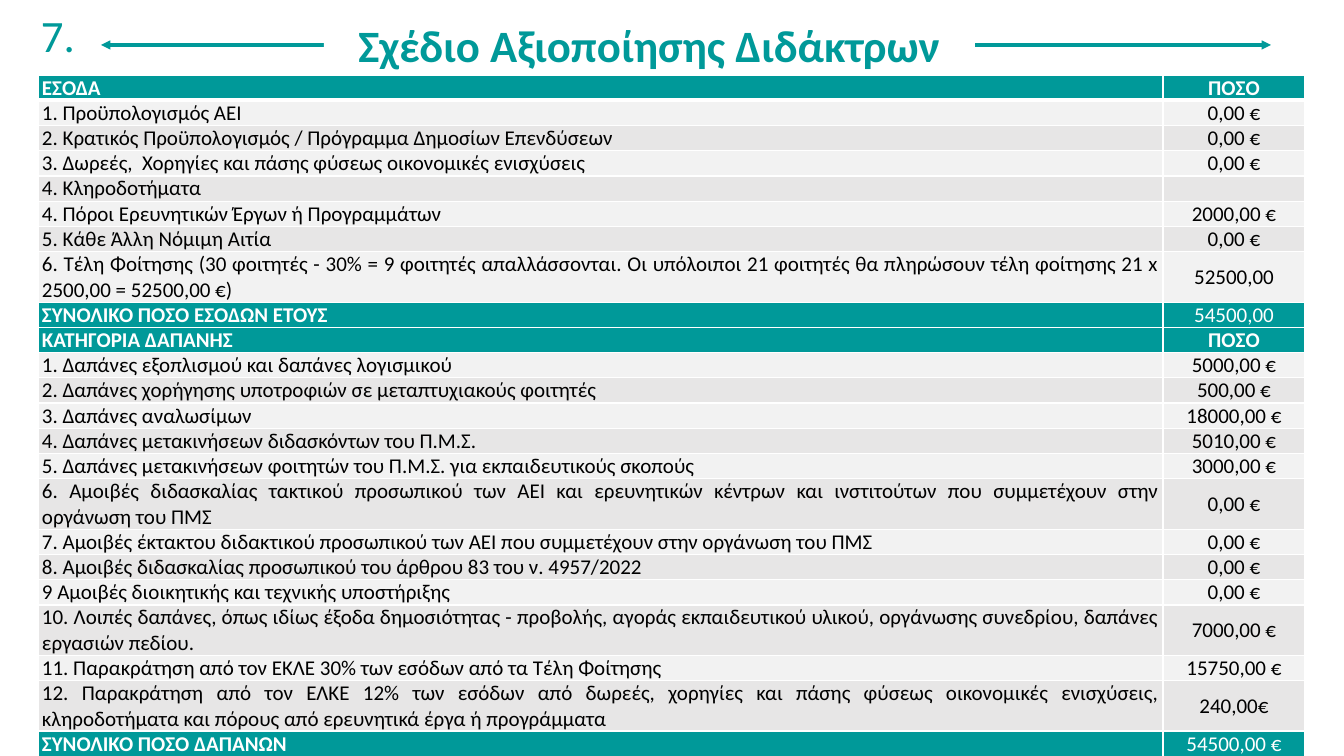
from dataclasses import dataclass
from math import ceil

from lxml.etree import SubElement
from pptx import Presentation
from pptx.dml.color import RGBColor
from pptx.enum.shapes import MSO_CONNECTOR, MSO_SHAPE
from pptx.enum.text import MSO_ANCHOR, PP_ALIGN
from pptx.oxml.ns import qn
from pptx.util import Emu, Pt

TITLE = "Σχέδιο Αξιοποίησης Διδάκτρων"
NUMBER = "7."
SECTIONS = [
    {
        "header": ("ΕΣΟΔΑ", "ΠΟΣΟ"),
        "items": [
            ("1. Προϋπολογισμός ΑΕΙ", "0,00 €"),
            ("2. Κρατικός Προϋπολογισμός / Πρόγραμμα Δημοσίων Επενδύσεων", "0,00 €"),
            ("3. Δωρεές,  Χορηγίες και πάσης φύσεως οικονομικές ενισχύσεις", "0,00 €"),
            ("4. Κληροδοτήματα", ""),
            ("4. Πόροι Ερευνητικών Έργων ή Προγραμμάτων", "2000,00 €"),
            ("5. Κάθε Άλλη Νόμιμη Αιτία", "0,00 €"),
            ("6. Τέλη Φοίτησης (30 φοιτητές - 30% = 9 φοιτητές απαλλάσσονται. "
             "Οι υπόλοιποι 21 φοιτητές θα πληρώσουν τέλη φοίτησης "
             "21 x 2500,00 = 52500,00 €)", "52500,00"),
        ],
        "total": ("ΣΥΝΟΛΙΚΟ ΠΟΣΟ ΕΣΟΔΩΝ ΕΤΟΥΣ", "54500,00"),
    },
    {
        "header": ("ΚΑΤΗΓΟΡΙΑ ΔΑΠΑΝΗΣ", "ΠΟΣΟ"),
        "items": [
            ("1. Δαπάνες εξοπλισμού και δαπάνες λογισμικού", "5000,00 €"),
            ("2. Δαπάνες χορήγησης υποτροφιών σε μεταπτυχιακούς φοιτητές", "500,00 €"),
            ("3. Δαπάνες αναλωσίμων", "18000,00 €"),
            ("4. Δαπάνες μετακινήσεων διδασκόντων του Π.Μ.Σ.", "5010,00 €"),
            ("5. Δαπάνες μετακινήσεων φοιτητών του Π.Μ.Σ. για εκπαιδευτικούς σκοπούς",
             "3000,00 €"),
            ("6. Αμοιβές διδασκαλίας τακτικού προσωπικού των ΑΕΙ και ερευνητικών "
             "κέντρων και ινστιτούτων που συμμετέχουν στην οργάνωση του ΠΜΣ", "0,00 €"),
            ("7. Αμοιβές έκτακτου διδακτικού προσωπικού των ΑΕΙ που συμμετέχουν "
             "στην οργάνωση του ΠΜΣ", "0,00 €"),
            ("8. Αμοιβές διδασκαλίας προσωπικού του άρθρου 83 του ν. 4957/2022", "0,00 €"),
            ("9 Αμοιβές διοικητικής και τεχνικής υποστήριξης", "0,00 €"),
            ("10. Λοιπές δαπάνες, όπως ιδίως έξοδα δημοσιότητας - προβολής, αγοράς "
             "εκπαιδευτικού υλικού, οργάνωσης συνεδρίου, δαπάνες εργασιών πεδίου.",
             "7000,00 €"),
            ("11. Παρακράτηση από τον ΕΚΛΕ 30% των εσόδων από τα Τέλη Φοίτησης",
             "15750,00 €"),
            ("12. Παρακράτηση από τον ΕΛΚΕ 12% των εσόδων από δωρεές, χορηγίες και "
             "πάσης φύσεως οικονομικές ενισχύσεις, κληροδοτήματα και πόρους από "
             "ερευνητικά έργα ή προγράμματα", "240,00€"),
        ],
        "total": ("ΣΥΝΟΛΙΚΟ ΠΟΣΟ ΔΑΠΑΝΩΝ", "54500,00 €"),
    },
]


@dataclass(frozen=True)
class Theme:
    font: str = "Calibri"
    teal: str = "009999"
    white: str = "FFFFFF"
    black: str = "000000"
    bands: tuple = ("F2F2F2", "E7E6E6")
    heading: int = 32
    body: int = 15


THEME = Theme()
COLUMN_WIDTHS = (1125, 142)
LINE_HEIGHT = 25
CHARS_PER_LINE = 115


def px(length):
    return Emu(round(length * 914400 / 100.8))


def paint(fill, color):
    fill.solid()
    fill.fore_color.rgb = RGBColor.from_string(color)


def write(frame, text, size, color, bold=False, align=PP_ALIGN.LEFT):
    paragraph = frame.paragraphs[0]
    paragraph.alignment = align
    font = paragraph.font
    font.name, font.size, font.bold = THEME.font, Pt(size), bold
    font.color.rgb = RGBColor.from_string(color)
    if text:
        paragraph.add_run().text = text
    else:
        SubElement(paragraph._p, qn("a:endParaRPr"), sz=str(size * 100))


def border(cell, bottom_width):
    properties = cell._tc.get_or_add_tcPr()
    for side, width in (("L", 1), ("R", 1), ("T", 1), ("B", bottom_width)):
        edge = SubElement(properties, qn(f"a:ln{side}"), w=str(Pt(width)))
        SubElement(SubElement(edge, qn("a:solidFill")), qn("a:srgbClr"), val=THEME.white)


def budget_rows():
    for section in SECTIONS:
        yield "header", section["header"], THEME.teal
        for index, item in enumerate(section["items"]):
            yield "item", item, THEME.bands[index % 2]
        yield "total", section["total"], THEME.teal


def add_heading(slide):
    arrow = slide.shapes.add_connector(
        MSO_CONNECTOR.STRAIGHT, px(101), px(45), px(1271), px(45))
    arrow.line.color.rgb = RGBColor.from_string(THEME.teal)
    arrow.line.width = Pt(2.25)
    for end in ("headEnd", "tailEnd"):
        SubElement(arrow.line._get_or_add_ln(), qn(f"a:{end}"), type="triangle")
    SubElement(arrow._element.spPr, qn("a:effectLst"))

    title = slide.shapes.add_shape(
        MSO_SHAPE.RECTANGLE, px(324), px(13), px(651), px(65))
    title.shadow.inherit = False
    paint(title.fill, THEME.white)
    title.line.fill.background()
    title.text_frame.word_wrap = True
    title.text_frame.vertical_anchor = MSO_ANCHOR.TOP
    write(title.text_frame, TITLE, THEME.heading, THEME.teal, True, PP_ALIGN.CENTER)

    number = slide.shapes.add_textbox(px(31), px(3), px(54), px(65))
    number.text_frame.word_wrap = False
    write(number.text_frame, NUMBER, THEME.heading, THEME.teal)


def add_budget(slide):
    rows = list(budget_rows())
    heights = [LINE_HEIGHT * ceil(len(texts[0]) / CHARS_PER_LINE) for _, texts, _ in rows]
    budget = slide.shapes.add_table(
        len(rows), len(COLUMN_WIDTHS), px(38), px(75),
        px(sum(COLUMN_WIDTHS)), px(sum(heights))).table
    budget.horz_banding = False
    for column, width in zip(budget.columns, COLUMN_WIDTHS):
        column.width = px(width)
    for r, (kind, texts, fill) in enumerate(rows):
        budget.rows[r].height = px(heights[r])
        is_item = kind == "item"
        color = THEME.black if is_item else THEME.white
        label_align = PP_ALIGN.JUSTIFY if is_item else PP_ALIGN.LEFT
        styles = ((not is_item, label_align), (kind == "header", PP_ALIGN.CENTER))
        for c, (text, (bold, align)) in enumerate(zip(texts, styles)):
            cell = budget.cell(r, c)
            cell.margin_left = cell.margin_right = px(4)
            cell.margin_top = cell.margin_bottom = 0
            cell.vertical_anchor = MSO_ANCHOR.MIDDLE
            border(cell, 3 if r == 0 else 1)
            paint(cell.fill, fill)
            write(cell.text_frame, text, THEME.body, color, bold, align)


def main():
    deck = Presentation()
    deck.slide_width, deck.slide_height = px(1344), px(756)
    slide = deck.slides.add_slide(deck.slide_layouts[6])
    add_heading(slide)
    add_budget(slide)
    deck.save("out.pptx")


if __name__ == "__main__":
    main()
